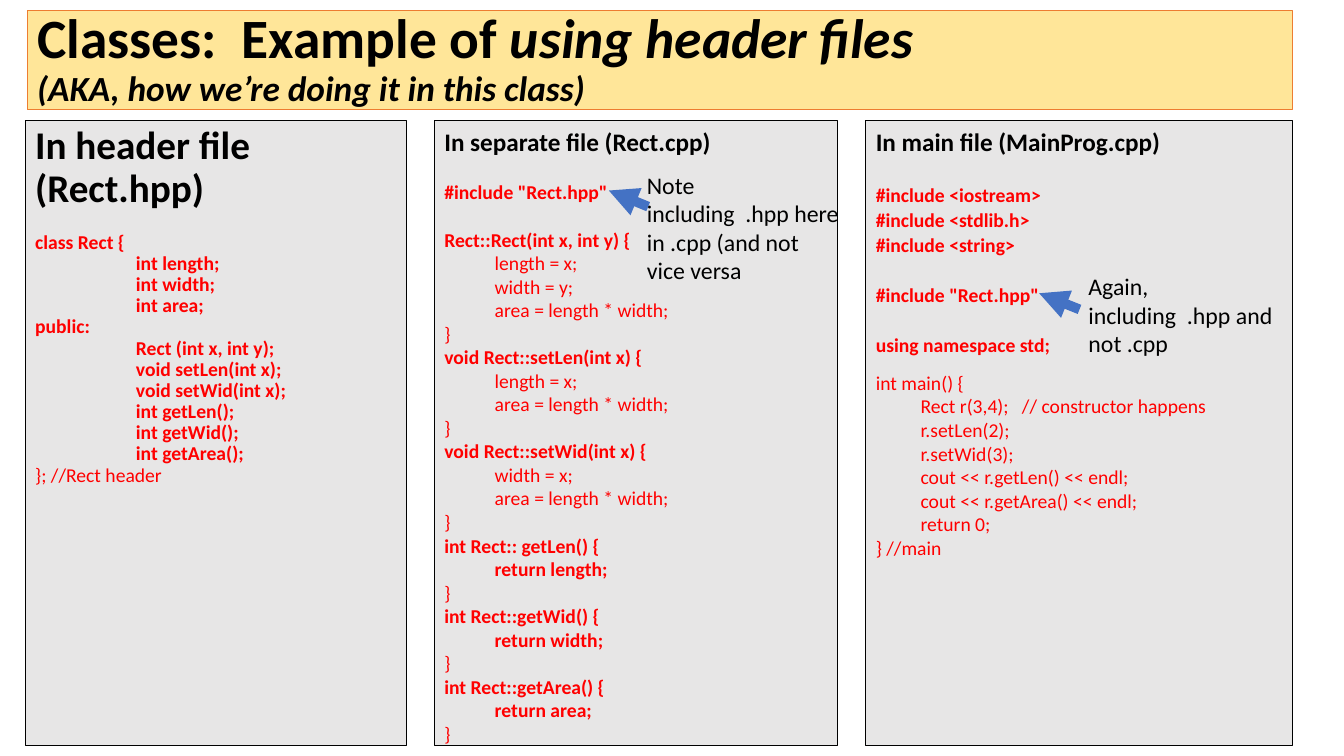
from dataclasses import dataclass

from lxml import etree
from pptx import Presentation
from pptx import util as u
from pptx.dml.color import RGBColor
from pptx.enum import shapes, text
from pptx.oxml import ns

Pt = u.Pt


@dataclass(frozen=True)
class Theme:
    font: str = "Calibri"
    ink: str = "000000"
    code: str = "FF0000"
    banner: str = "FFE699"
    banner_line: str = "ED7D31"
    panel: str = "E7E6E6"
    arrow: str = "4472C4"
    title_size: float = 39.6
    subtitle_size: float = 25.2
    code_size: float = 14
    note_size: float = 17
    outline: float = 0.75
    arrow_width: float = 7


INDENT = "    "
PANEL_TOP, PANEL_HEIGHT = 86.4, 446.4

# Each block of code: space before it, space before its further lines, bold, lines.
HEADER_CODE = [
    (15.4, 0, True, """class Rect {
    int length;
    int width;
    int area;
public:
    Rect (int x, int y);
    void setLen(int x);
    void setWid(int x);
    int getLen();
    int getWid();
    int getArea();"""),
    (0, 0, False, "}; //Rect header"),
]


def setter(name, field):
    return [
        (0, 0, True, f"void Rect::{name}(int x) {{"),
        (0, 0, False, f"    {field} = x;\n    area = length * width;\n}}"),
    ]


def getter(name, field):
    return [
        (0, 0, True, f"int Rect::{name}() {{\n    return {field};"),
        (0, 0, False, "}"),
    ]


CLASS_CODE = [
    (17.1, 0, True, '#include "Rect.hpp"'),
    (17.1, 0, True, "Rect::Rect(int x, int y) {"),
    (0, 0, False, """    length = x;
    width = y;
    area = length * width;
}"""),
    *setter("setLen", "length"),
    *setter("setWid", "width"),
    *getter(" getLen", "length"),
    *getter("getWid", "width"),
    *getter("getArea", "area"),
]

MAIN_CODE = [
    (19.1, 1, True, "#include <iostream>\n#include <stdlib.h>\n#include <string>"),
    (19.1, 1, True, '#include "Rect.hpp"'),
    (19.1, 1, True, "using namespace std;"),
    (10, 0, False, """int main() {
    Rect r(3,4);   // constructor happens
    r.setLen(2);
    r.setWid(3);
    cout << r.getLen() << endl;
    cout << r.getArea() << endl;
    return 0;
} //main"""),
]


class SlideBuilder:
    def __init__(self, slide, theme):
        self.slide = slide
        self.theme = theme

    def format_run(self, run, size, color, bold=False, italic=False):
        font = run.font
        font.name, font.size = self.theme.font, Pt(size)
        font.bold, font.italic = bold, italic
        font.color.rgb = RGBColor.from_string(color)

    def format_box(self, shape, fill, line):
        shape.fill.solid()
        shape.fill.fore_color.rgb = RGBColor.from_string(fill)
        shape.line.color.rgb = RGBColor.from_string(line)
        shape.line.width = Pt(self.theme.outline)

    def title(self, left, top, width, height, heading, emphasis, subtitle):
        theme = self.theme
        shape = self.slide.shapes.title
        shape.left, shape.top = Pt(left), Pt(top)
        shape.width, shape.height = Pt(width), Pt(height)
        self.format_box(shape, theme.banner, theme.banner_line)
        frame = shape.text_frame
        frame.auto_size = text.MSO_AUTO_SIZE.NONE
        frame.vertical_anchor = text.MSO_ANCHOR.MIDDLE
        paragraph = frame.paragraphs[0]
        paragraph.alignment = text.PP_ALIGN.LEFT
        paragraph.line_spacing = 0.9
        paragraph.text = heading
        self.format_run(paragraph.runs[0], theme.title_size, theme.ink, True)
        for words, size in ((emphasis, theme.title_size), (subtitle, theme.subtitle_size)):
            run = paragraph.add_run()
            run.text = words
            self.format_run(run, size, theme.ink, True, True)
            if words == emphasis:
                paragraph.add_line_break()

    def panel(self, left, width, heading, heading_size, blocks, indent, line_spacing=1.0):
        theme = self.theme
        shape = self.slide.shapes.add_shape(
            shapes.MSO_SHAPE.RECTANGLE, Pt(left), Pt(PANEL_TOP), Pt(width), Pt(PANEL_HEIGHT))
        shape.shadow.inherit = False
        self.format_box(shape, theme.panel, theme.ink)
        frame = shape.text_frame
        frame.word_wrap = True
        frame.vertical_anchor = text.MSO_ANCHOR.TOP
        paragraph = frame.paragraphs[0]
        paragraph.text = heading
        paragraph.alignment = text.PP_ALIGN.LEFT
        paragraph.line_spacing = line_spacing
        self.format_run(paragraph.runs[0], heading_size, theme.ink, True)
        for before, lead, bold, code in blocks:
            for number, line in enumerate(code.split("\n")):
                paragraph = frame.add_paragraph()
                paragraph.text = line.removeprefix(INDENT)
                paragraph.alignment = text.PP_ALIGN.LEFT
                paragraph.line_spacing = line_spacing
                paragraph.space_before = Pt(lead if number else before)
                if line.startswith(INDENT):
                    paragraph._p.get_or_add_pPr().set("marL", str(Pt(indent)))
                self.format_run(paragraph.runs[0], theme.code_size, theme.code, bold)

    def note(self, left, top, width, height, words):
        """Add a text box in which double spaces never break the line."""
        box = self.slide.shapes.add_textbox(Pt(left), Pt(top), Pt(width), Pt(height))
        frame = box.text_frame
        frame.word_wrap = True
        frame.text = words.replace("  ", 2 * chr(160))
        self.format_run(frame.paragraphs[0].runs[0], self.theme.note_size, self.theme.ink)

    def arrow(self, x1, y1, x2, y2):
        connector = self.slide.shapes.add_connector(
            shapes.MSO_CONNECTOR.STRAIGHT, Pt(x1), Pt(y1), Pt(x2), Pt(y2))
        connector.line.color.rgb = RGBColor.from_string(self.theme.arrow)
        connector.line.width = Pt(self.theme.arrow_width)
        line = connector.line._get_or_add_ln()
        etree.SubElement(line, ns.qn("a:tailEnd"), type="triangle")
        etree.SubElement(connector._element.spPr, ns.qn("a:effectLst"))


def main():
    presentation = Presentation()
    presentation.slide_width, presentation.slide_height = Pt(960), Pt(540)
    slide = presentation.slides.add_slide(presentation.slide_layouts[5])
    builder = SlideBuilder(slide, Theme())

    builder.title(19.4, 7.2, 903.6, 71.3, "Classes:  Example of ",
                  "using header files ", "(AKA, how we’re doing it in this class)")
    builder.panel(18, 272.2, "In header file (Rect.hpp)", 28, HEADER_CODE, 72, 0.9)
    builder.panel(618.5, 304.6, "In main file (MainProg.cpp)", 18, MAIN_CODE, 32)
    builder.panel(310.3, 288, "In separate file (Rect.cpp)", 18, CLASS_CODE, 36)

    builder.arrow(463, 147.6, 434.9, 136.1)
    builder.note(455, 118.1, 153.4, 69.1,
                 "Note including  .hpp here in .cpp (and not vice versa")
    builder.arrow(771.1, 221, 742.3, 209.5)
    builder.note(770.4, 190.8, 153.4, 48.2, "Again, including  .hpp and not .cpp")

    presentation.save("out.pptx")


if __name__ == "__main__":
    main()
